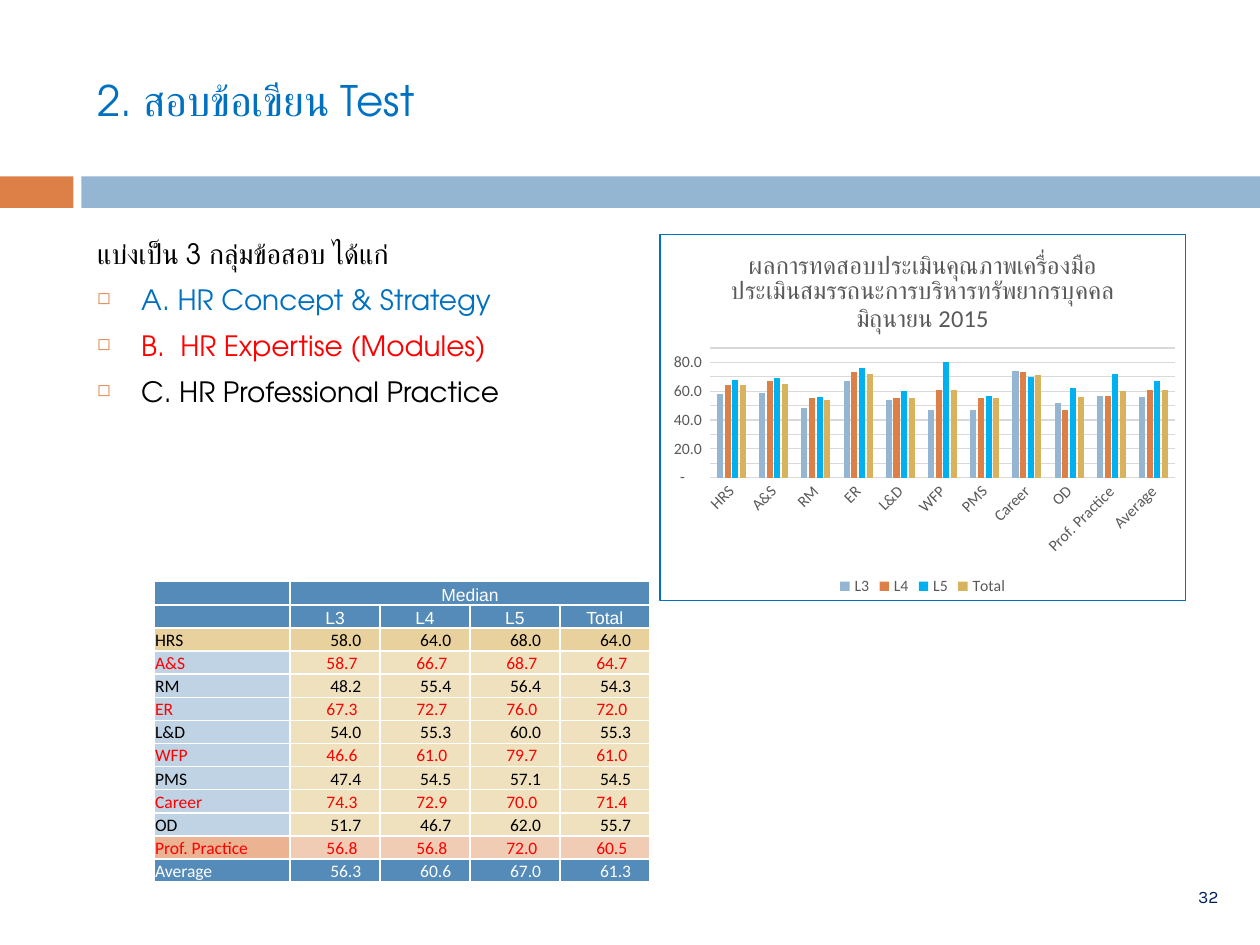
from lxml.etree import SubElement
from pptx import Presentation
from pptx.chart.data import CategoryChartData
from pptx.dml.color import RGBColor
from pptx.enum.chart import XL_CHART_TYPE, XL_LEGEND_POSITION, XL_TICK_MARK
from pptx.enum.shapes import MSO_SHAPE
from pptx.enum.text import MSO_ANCHOR, PP_ALIGN
from pptx.oxml import parse_xml
from pptx.oxml.ns import nsdecls, qn
from pptx.util import Pt

BLACK = RGBColor(0x00, 0x00, 0x00)
WHITE = RGBColor(0xFF, 0xFF, 0xFF)
RED = RGBColor(0xFF, 0x00, 0x00)
BLUE = RGBColor(0x00, 0x70, 0xC0)
NAVY = RGBColor(0x00, 0x20, 0x60)
SKY = RGBColor(0x94, 0xB6, 0xD2)
ORANGE = RGBColor(0xDD, 0x80, 0x47)
CYAN = RGBColor(0x00, 0xB0, 0xF0)
GOLD = RGBColor(0xD8, 0xB2, 0x5C)
GRAY = RGBColor(0x59, 0x59, 0x59)
PALE = RGBColor(0xD9, 0xD9, 0xD9)
STEEL = RGBColor(0x55, 0x8B, 0xB8)
ICE = RGBColor(0xBF, 0xD3, 0xE4)
CREAM = RGBColor(0xEF, 0xE0, 0xBE)
SAND = RGBColor(0xE8, 0xD1, 0x9D)
PEACH = RGBColor(0xEB, 0xB3, 0x91)
BLUSH = RGBColor(0xF1, 0xCC, 0xB5)

HEAD = "TeX Gyre Adventor"
BODY = "Calibri"
# level, column colour, whole-number scores for the chart
LEVELS = [
    ("L3", SKY, (58, 59, 48, 67, 54, 47, 47, 74, 52, 57, 56)),
    ("L4", ORANGE, (64, 67, 55, 73, 55, 61, 55, 73, 47, 57, 61)),
    ("L5", CYAN, (68, 69, 56, 76, 60, 80, 57, 70, 62, 72, 67)),
    ("Total", GOLD, (64, 65, 54, 72, 55, 61, 55, 71, 56, 60, 61)),
]
# name, medians by level, text colour, name fill, value fill
ROWS = [
    ("HRS", (58.0, 64.0, 68.0, 64.0), BLACK, SAND, SAND),
    ("A&S", (58.7, 66.7, 68.7, 64.7), RED, ICE, CREAM),
    ("RM", (48.2, 55.4, 56.4, 54.3), BLACK, ICE, CREAM),
    ("ER", (67.3, 72.7, 76.0, 72.0), RED, ICE, CREAM),
    ("L&D", (54.0, 55.3, 60.0, 55.3), BLACK, ICE, CREAM),
    ("WFP", (46.6, 61.0, 79.7, 61.0), RED, ICE, CREAM),
    ("PMS", (47.4, 54.5, 57.1, 54.5), BLACK, ICE, CREAM),
    ("Career", (74.3, 72.9, 70.0, 71.4), RED, ICE, CREAM),
    ("OD", (51.7, 46.7, 62.0, 55.7), BLACK, ICE, CREAM),
    ("Prof. Practice", (56.8, 56.8, 72.0, 60.5), RED, PEACH, BLUSH),
    ("Average", (56.3, 60.6, 67.0, 61.3), WHITE, STEEL, STEEL),
]
GROUPS = [
    ("A. HR Concept & Strategy", BLUE),
    ("B.  HR Expertise (Modules)", RED),
    ("C. HR Professional Practice", BLACK),
]


def style(font, size, color, face=BODY):
    font.size, font.name, font.bold = Pt(size), face, False
    font.color.rgb = color


def write(par, text, size=10, color=BLACK, face=BODY, align=PP_ALIGN.LEFT, before=0):
    par.alignment = align
    par.space_before = Pt(before)
    run = par.add_run()
    run.text = text
    style(run.font, size, color, face)


def add_bar(slide, left, width, color):
    bar = slide.shapes.add_shape(
        MSO_SHAPE.RECTANGLE, Pt(left), Pt(100.8), Pt(width), Pt(18))
    bar.shadow.inherit = False
    bar.fill.solid()
    bar.fill.fore_color.rgb = color
    bar.line.fill.background()


def add_box(slide, left, top, width, height, anchor=MSO_ANCHOR.MIDDLE):
    box = slide.shapes.add_textbox(Pt(left), Pt(top), Pt(width), Pt(height))
    frame = box.text_frame
    frame.word_wrap = True
    frame.vertical_anchor = anchor
    return frame


def add_bullet(par):
    props = par._p.get_or_add_pPr()
    indent = Pt(25.2)
    props.set("marL", str(indent))
    props.set("indent", str(-indent))
    tint = SubElement(props, qn("a:buClr"))
    SubElement(tint, qn("a:srgbClr"), val=str(ORANGE))
    SubElement(props, qn("a:buSzPct"), val="60000")
    SubElement(props, qn("a:buChar"), char="◻")


def add_groups(slide):
    frame = add_box(slide, 48.4, 131.8, 642, 110, MSO_ANCHOR.TOP)
    write(frame.paragraphs[0], "แบ่งเป็น 3 กลุ่มข้อสอบ ได้แก่", size=16, face=HEAD)
    for text, color in GROUPS:
        par = frame.add_paragraph()
        par.space_before = Pt(7)
        add_bullet(par)
        write(par, text, size=16, color=color, face=HEAD, before=7)


def add_chart(slide):
    data = CategoryChartData(number_format="0")
    data.categories = [row[0] for row in ROWS]
    for name, _, scores in LEVELS:
        data.add_series(name, scores)
    chart = slide.shapes.add_chart(
        XL_CHART_TYPE.COLUMN_CLUSTERED, Pt(376.7), Pt(133.5), Pt(301), Pt(210),
        data).chart
    style(chart.font, 10, BLACK)

    title = chart.chart_title.text_frame
    write(title.paragraphs[0],
          "ผลการทดสอบประเมินคุณภาพเครื่องมือประเมินสมรรถนะการบริหารทรัพยากรบุคคล",
          size=14, color=GRAY, align=PP_ALIGN.CENTER)
    write(title.add_paragraph(), "มิถุนายน 2015",
          size=14, color=GRAY, align=PP_ALIGN.CENTER)
    chart.chart_title.include_in_layout = False

    chart.has_legend = True
    chart.legend.position = XL_LEGEND_POSITION.BOTTOM
    chart.legend.include_in_layout = False
    style(chart.legend.font, 9, GRAY)

    plot = chart.plots[0]
    plot.gap_width, plot.overlap = 219, -27
    plot.vary_by_categories = False
    for series, (_, color, _) in zip(plot.series, LEVELS):
        series.format.fill.solid()
        series.format.fill.fore_color.rgb = color

    cat, val = chart.category_axis, chart.value_axis
    for axis in (cat, val):
        axis.major_tick_mark = axis.minor_tick_mark = XL_TICK_MARK.NONE
        style(axis.tick_labels.font, 9, GRAY)
    val.minimum_scale, val.maximum_scale, val.major_unit = 0, 90, 10
    val.format.line.fill.background()
    for line in (cat.format.line, val.major_gridlines.format.line):
        line.color.rgb = PALE
        line.width = Pt(0.75)
    labels = val.tick_labels
    labels.number_format = r'_-* #,##0.0_-;\-* #,##0.0_-;_-* "-"??_-;'
    labels.number_format_is_linked = False
    slant = cat._element.find(qn("c:txPr")).find(qn("a:bodyPr"))
    slant.set("rot", str(-45 * 60000))

    frame = parse_xml(
        f'<c:spPr {nsdecls("c", "a")}><a:solidFill><a:srgbClr val="{WHITE}"/></a:solidFill>'
        f'<a:ln w="{Pt(0.75)}"><a:solidFill><a:srgbClr val="{BLUE}"/></a:solidFill></a:ln>'
        '</c:spPr>')
    chart.element.find(qn("c:chart")).addnext(frame)


def fill_cell(cell, text, fill, right=0.7, **fmt):
    cell.margin_left = cell.margin_top = Pt(0.7)
    cell.margin_right, cell.margin_bottom = Pt(right), 0
    cell.vertical_anchor = MSO_ANCHOR.BOTTOM
    props = cell._tc.get_or_add_tcPr()
    for side in ("lnL", "lnR", "lnT", "lnB"):
        line = SubElement(props, qn(f"a:{side}"), w=str(Pt(1)))
        paint = SubElement(line, qn("a:solidFill"))
        SubElement(paint, qn("a:srgbClr"), val=str(WHITE))
    cell.fill.solid()
    cell.fill.fore_color.rgb = fill
    par = cell.text_frame.paragraphs[0]
    if text:
        write(par, text, **fmt)
    else:
        SubElement(par._p, qn("a:endParaRPr"), sz="1000")


def add_table(slide):
    count = len(ROWS) + 2
    table = slide.shapes.add_table(
        count, 5, Pt(88), Pt(332.4), Pt(283.4), Pt(13.22 * count)).table
    table.first_row = table.horz_banding = False
    for col, width in zip(table.columns, [77.8] + [51.4] * 4):
        col.width = Pt(width)
    for row in table.rows:
        row.height = Pt(13.22)
    heads = [["", "Median", "", "", ""], ["", *(level[0] for level in LEVELS)]]
    for r, names in enumerate(heads):
        for c, name in enumerate(names):
            fill_cell(table.cell(r, c), name, STEEL,
                      color=WHITE, face="Arial", align=PP_ALIGN.CENTER)
    table.cell(0, 1).merge(table.cell(0, 4))
    for r, (name, marks, color, first, rest) in enumerate(ROWS, len(heads)):
        fill_cell(table.cell(r, 0), name, first, color=color)
        inset = 13 if color == RED else 10.8
        for c, mark in enumerate(marks, 1):
            fill_cell(table.cell(r, c), f"{mark:.1f}", rest, right=inset,
                      color=color, align=PP_ALIGN.RIGHT)


def main():
    deck = Presentation()
    deck.slide_width, deck.slide_height = Pt(720), Pt(540)
    slide = deck.slides.add_slide(deck.slide_layouts[6])
    add_bar(slide, 0, 42, ORANGE)
    add_bar(slide, 46.5, 673.5, SKY)
    number = add_box(slide, 669.6, 502.6, 41.8, 19.4)
    write(number.paragraphs[0], "32", color=NAVY, face="Karla", align=PP_ALIGN.CENTER)
    title = add_box(slide, 48.4, 18, 642, 78)
    write(title.paragraphs[0], "2. สอบข้อเขียน Test", size=24, color=BLUE, face=HEAD)
    add_groups(slide)
    add_chart(slide)
    add_table(slide)
    deck.save("out.pptx")


if __name__ == "__main__":
    main()
